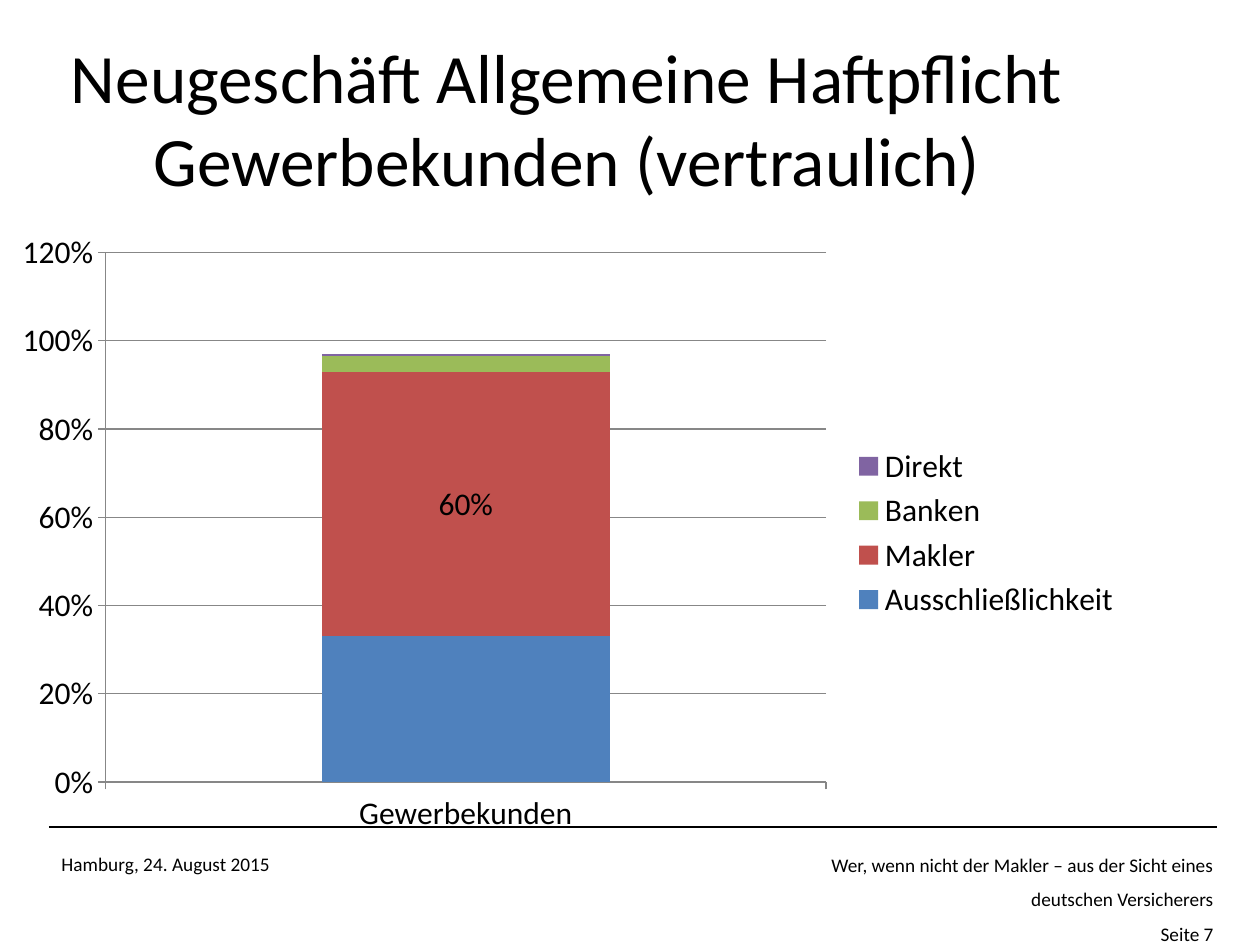
from lxml import etree
from pptx import Presentation
from pptx.chart.data import CategoryChartData
from pptx.dml.color import RGBColor
from pptx.enum.chart import XL_CHART_TYPE as ChartType, XL_LABEL_POSITION as LabelPosition
from pptx.enum.chart import XL_LEGEND_POSITION as LegendPosition, XL_TICK_MARK as TickMark
from pptx.enum.shapes import MSO_CONNECTOR as Connector
from pptx.enum.text import MSO_ANCHOR as Anchor, MSO_AUTO_SIZE as AutoSize, PP_ALIGN as Align
from pptx.oxml.ns import qn
from pptx.util import Pt

FONT = "Calibri"
COLORS = {"text": "000000", "grid": "878787", "Ausschließlichkeit": "4F81BD",
          "Makler": "C0504D", "Banken": "9BBB59", "Direkt": "8064A2"}
SHARES = {"Ausschließlichkeit": 0.33, "Makler": 0.6, "Banken": 0.035, "Direkt": 0.005}
TAB = 86


def px(length):
    return round(length * 914400 / 126)


def style_font(font, size):
    font.name = FONT
    font.size = Pt(size)
    font.color.rgb = RGBColor.from_string(COLORS["text"])


deck = Presentation()
deck.slide_width, deck.slide_height = px(1260), px(945)
page = deck.slides.add_slide(deck.slide_layouts[5])

rule = page.shapes.add_connector(Connector.STRAIGHT, px(49), px(827), px(1217), px(827))
rule.line.color.rgb = RGBColor.from_string(COLORS["text"])
rule.line.width = Pt(0.75)
etree.SubElement(rule._element.spPr, qn("a:effectLst"))

footers = [
    (49, 236, 48, False, ["Hamburg, 24. August 2015"]),
    (814, 412, 117, True, [
        "Wer, wenn nicht der Makler – aus der Sicht eines deutschen Versicherers", "Seite 7"]),
]
for left, width, height, right_aligned, lines in footers:
    box = page.shapes.add_textbox(px(left), px(835), px(width), px(height))
    frame = box.text_frame
    frame.word_wrap = right_aligned
    frame.auto_size = AutoSize.SHAPE_TO_FIT_TEXT
    for index, line in enumerate(lines):
        para = frame.paragraphs[0] if index == 0 else frame.add_paragraph()
        para.line_spacing = 1.5
        if right_aligned:
            para.alignment = Align.RIGHT
            properties = para._p.get_or_add_pPr()
            properties.set("marL", str(px(TAB)))
            properties.set("indent", str(-px(TAB)))
            tabs = etree.SubElement(properties, qn("a:tabLst"))
            etree.SubElement(tabs, qn("a:tab"), pos=str(px(TAB)), algn="l")
        span = para.add_run()
        span.text = line
        style_font(span.font, 11)

title = page.shapes.title
title.left, title.top, title.width, title.height = px(0), px(38), px(1134), px(158)
title.text_frame.word_wrap = True
title.text_frame.auto_size = AutoSize.NONE
title.text_frame.vertical_anchor = Anchor.MIDDLE
para = title.text_frame.paragraphs[0]
para.alignment = Align.CENTER
span = para.add_run()
span.text = "Neugeschäft Allgemeine Haftpflicht Gewerbekunden (vertraulich)"
style_font(span.font, 39.6)

data = CategoryChartData(number_format="0%")
data.categories = ["Gewerbekunden"]
for name, share in SHARES.items():
    data.add_series(name, [share])
chart = page.shapes.add_chart(
    ChartType.COLUMN_STACKED, px(0), px(221), px(1134), px(624), data).chart
style_font(chart.font, 18)
chart.has_title = False
chart.has_legend = True
chart.legend.position = LegendPosition.RIGHT
chart.legend.include_in_layout = False

plot = chart.plots[0]
plot.gap_width = 150
plot.overlap = 100
plot.vary_by_categories = False
for series in plot.series:
    series.format.fill.solid()
    series.format.fill.fore_color.rgb = RGBColor.from_string(COLORS[series.name])
    if series.name == "Makler":
        label = series.points[0].data_label
        style_font(label.font, 18)
        label.position = LabelPosition.CENTER

value_axis = chart.value_axis
value_axis.minimum_scale, value_axis.maximum_scale, value_axis.major_unit = 0, 1.2, 0.2
value_axis.has_major_gridlines = True
value_axis.tick_labels.number_format = "0%"
value_axis.tick_labels.number_format_is_linked = False
for axis in (chart.category_axis, value_axis):
    axis.major_tick_mark = TickMark.OUTSIDE
    axis.minor_tick_mark = TickMark.NONE
for part in (chart.category_axis, value_axis, value_axis.major_gridlines):
    part.format.line.color.rgb = RGBColor.from_string(COLORS["grid"])
    part.format.line.width = Pt(0.75)

deck.save("out.pptx")
